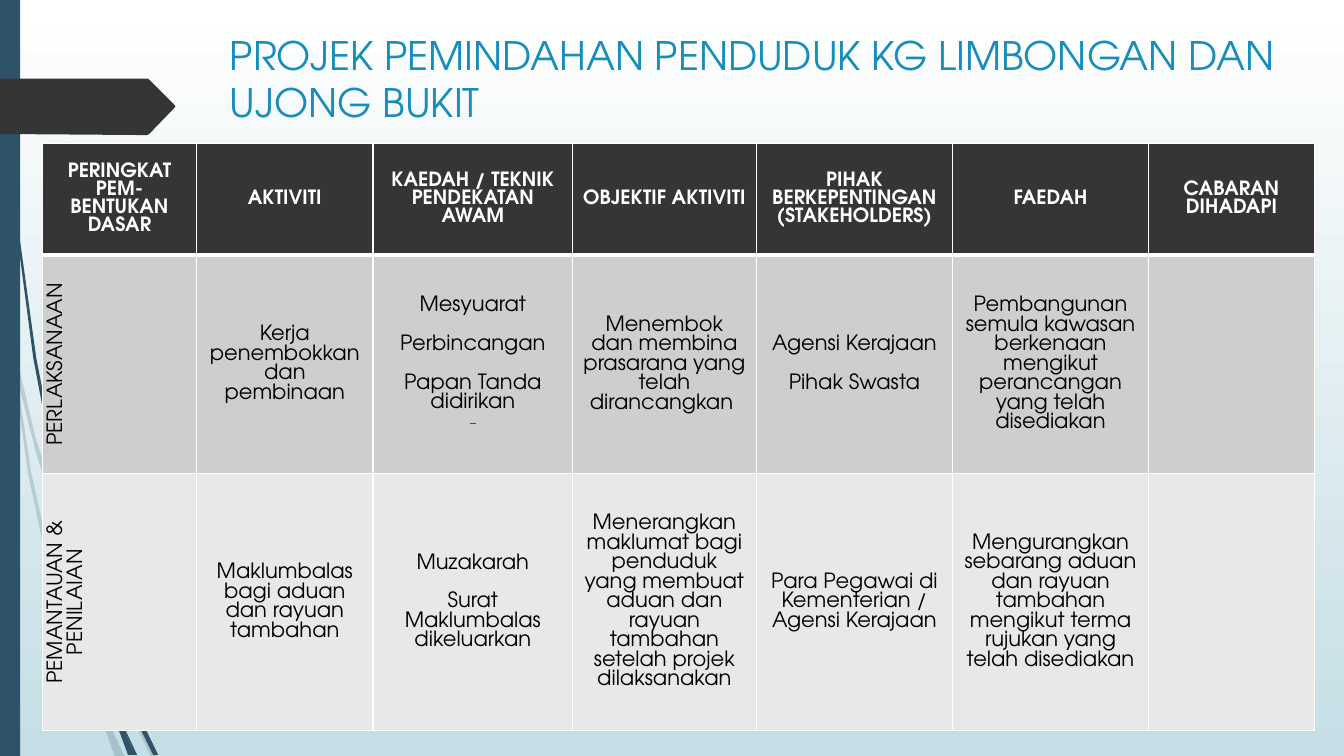
from copy import deepcopy
from dataclasses import dataclass
from typing import Any

from lxml.etree import SubElement
from pptx import Presentation
from pptx.dml.color import RGBColor
from pptx.enum.text import MSO_ANCHOR, PP_ALIGN
from pptx.enum.shapes import MSO_SHAPE
from pptx.oxml.ns import qn
from pptx.util import Inches, Pt

FONT = "TeX Gyre Adventor"
COLOURS = {
    "sky_top": "FFFFFF", "sky_bottom": "C5DEE5", "navy": "2E5369",
    "charcoal": "353535", "title": "178DBB", "white": "FFFFFF",
    "black": "000000", "red": "FF0000", "band_dark": "CECECE", "band_light": "E8E8E8",
}
Points = list[tuple[float, float]]


@dataclass
class Outline:
    points: Points
    colour: str = "navy"
    opacity: int = 100


@dataclass
class Entry:
    paras: tuple[str, ...] = ()
    gap: float = 13.9
    vertical: bool = False
    struck_end: bool = False


@dataclass
class Row:
    height: float
    fill: str
    text: str
    size: float
    bold: bool
    top: int
    bottom: int
    entries: list[Entry]


PALE_WISPS: list[Points] = [
    [(0.11, 3.5), (0.09, 3.22), (0, 2.82), (0, 2.99), (0.1, 3.44)],
    [(0.58, 5.22), (0.84, 5.99), (0.85, 5.86), (0.62, 5.2), (0.35, 4.33), (0.14, 3.45),
     (0.17, 3.76), (0.36, 4.5)],
    [(0.92, 6.07), (0.88, 5.96), (0.88, 6.1), (1.23, 6.94), (1.5, 7.51), (1.55, 7.51), (1.27, 6.92)],
    [(1.19, 7.51), (1.24, 7.51), (1.05, 7.11)],
    [(0.93, 6.83), (0.7, 6.19), (0.48, 5.45), (0.31, 4.69), (0.17, 3.76), (0.11, 3.5),
     (0.28, 4.7), (0.44, 5.46), (0.65, 6.21), (0.92, 6.93), (1.01, 7.14), (0.99, 7.07)],
    [(0.84, 5.99), (0.87, 6.46), (0.93, 6.83), (0.96, 6.92), (1.05, 7.11), (1.03, 7.06),
     (0.91, 6.46), (0.88, 6.1), (0.88, 6.08)],
    [(0.88, 5.84), (0.95, 5.22), (1.1, 4.62), (1.6, 3.49), (2.29, 2.45), (2.68, 1.98), (3.12, 1.54),
     (3.12, 1.53), (2.68, 1.97), (2.28, 2.44), (1.58, 3.48), (1.07, 4.61), (0.91, 5.22),
     (0.85, 5.84), (0.85, 5.86), (0.88, 5.96)],
    [(1.01, 7.14), (1.14, 7.51), (1.19, 7.51)],
    [(0.88, 6.08), (0.88, 5.96), (0.85, 5.86), (0.84, 5.99)],
    [(0.96, 6.92), (0.93, 6.83), (0.99, 7.07), (1.01, 7.14), (1.19, 7.51), (1.05, 7.11)],
]
NAVY_WISPS: list[Points] = [
    [(0.07, 1.1), (0.17, 2.33), (0.33, 3.55), (0.56, 4.77), (0.57, 4.81), (0.55, 4.53),
     (0.36, 3.55), (0.19, 2.32), (0.08, 1.09), (0.05, 0.48), (0.04, 0), (0.03, 0), (0.04, 0.48)],
    [(0.88, 5.92), (1.06, 6.45), (1.06, 6.31), (0.93, 5.9), (0.6, 4.72), (0.64, 5.05)],
    [(1.13, 6.49), (1.1, 6.41), (1.11, 6.56), (1.32, 7.08), (1.52, 7.49), (1.57, 7.49), (1.36, 7.06)],
    [(1.1, 6.91), (0.98, 6.57), (0.72, 5.56), (0.64, 5.05), (0.57, 4.77), (0.68, 5.57),
     (0.93, 6.59), (1.11, 7.08), (1.17, 7.22), (1.16, 7.17)],
    [(0.6, 4.72), (0.58, 4.53), (0.54, 3.49), (0.58, 2.45), (0.63, 1.93), (0.7, 1.41),
     (0.62, 1.93), (0.56, 2.45), (0.52, 3.49), (0.55, 4.49)],
    [(1.33, 7.49), (1.36, 7.49), (1.22, 7.19)],
    [(0.57, 4.77), (0.64, 5.05), (0.6, 4.72), (0.55, 4.49), (0.55, 4.53)],
    [(1.11, 6.33), (1.25, 5.52), (1.58, 4.76), (2.05, 4.06), (2.31, 3.74), (2.61, 3.44), (2.6, 3.44),
     (2.31, 3.73), (2.04, 4.05), (1.56, 4.74), (1.22, 5.51), (1.06, 6.31), (1.1, 6.41)],
    [(1.17, 7.22), (1.27, 7.49), (1.31, 7.49)],
    [(1.06, 6.45), (1.1, 6.91), (1.16, 7.06), (1.22, 7.19), (1.21, 7.16), (1.11, 6.56), (1.09, 6.51)],
    [(1.06, 6.45), (1.09, 6.51), (1.11, 6.56), (1.1, 6.41), (1.06, 6.31)],
    [(1.16, 7.06), (1.1, 6.91), (1.16, 7.17), (1.17, 7.22), (1.3, 7.49), (1.33, 7.49), (1.22, 7.19)],
]
TITLE_ARROW = Outline([(1.74, 1.06), (1.48, 1.33), (1.46, 1.34), (1.36, 1.34), (0, 1.33), (0, 0.78),
                       (1.46, 0.78), (1.48, 0.79), (1.73, 1.04)], "charcoal")
OUTLINES = [Outline(points, opacity=20) for points in PALE_WISPS] + [Outline(points) for points in NAVY_WISPS]

COLUMN_WIDTHS = [1.53, 1.75, 1.98, 1.82, 1.95, 1.94, 1.65]
HEADINGS = [
    "PERINGKAT PEM-BENTUKAN DASAR", "AKTIVITI", "KAEDAH / TEKNIK PENDEKATAN AWAM",
    "OBJEKTIF AKTIVITI", "PIHAK BERKEPENTINGAN (STAKEHOLDERS)", "FAEDAH", "CABARAN DIHADAPI",
]
ROWS = [
    Row(1.11, "charcoal", "white", 14, True, 1, 3, [Entry((heading,)) for heading in HEADINGS]),
    Row(2.17, "band_dark", "black", 15, False, 3, 1, [
        Entry(("PERLAKSANAAN",), vertical=True),
        Entry(("Kerja penembokkan dan pembinaan",)),
        Entry(("Mesyuarat", "Perbincangan", "Papan Tanda didirikan"), struck_end=True),
        Entry(("Menembok dan membina prasarana yang telah dirancangkan ",)),
        Entry(("Agensi Kerajaan", "Pihak Swasta")),
        Entry(("Pembangunan semula kawasan berkenaan mengikut perancangan yang telah disediakan",)),
        Entry(),
    ]),
    Row(2.55, "band_light", "black", 15, False, 1, 1, [
        Entry(("PEMANTAUAN &", "PENILAIAN"), gap=0, vertical=True),
        Entry(("Maklumbalas bagi aduan dan rayuan tambahan",)),
        Entry(("Muzakarah", "Surat Maklumbalas dikeluarkan")),
        Entry(("Menerangkan maklumat bagi penduduk yang membuat aduan dan rayuan tambahan "
               "setelah projek dilaksanakan",)),
        Entry(("Para Pegawai di Kementerian / Agensi Kerajaan",)),
        Entry(("Mengurangkan sebarang aduan dan rayuan tambahan mengikut terma rujukan "
               "yang telah disediakan",)),
        Entry(),
    ]),
]


def colour_of(name: str) -> RGBColor:
    return RGBColor.from_string(COLOURS[name])


def apply_format(target: Any, values: dict[str, Any]) -> None:
    for name, value in values.items():
        setattr(target, name, value)


def style_text(span: Any, size: float, colour: str, bold: bool = False) -> None:
    apply_format(span.font, {"name": FONT, "size": Pt(size), "bold": bold})
    span.font.color.rgb = colour_of(colour)


def paint_shape(shape: Any, colour: str) -> None:
    shape.shadow.inherit = False
    shape.fill.solid()
    shape.fill.fore_color.rgb = colour_of(colour)
    shape.line.fill.background()


def draw_outline(page: Any, outline: Outline) -> None:
    start, *others = [(Inches(x), Inches(y)) for x, y in outline.points]
    builder = page.shapes.build_freeform(*start)
    builder.add_line_segments(others, close=True)
    shape = builder.convert_to_shape()
    paint_shape(shape, outline.colour)
    if outline.opacity < 100:
        tint = shape.fill._xPr.find(qn("a:solidFill"))[0]
        SubElement(tint, qn("a:alpha"), val=str(outline.opacity * 1000))


def draw_borders(cell: Any, top: int, bottom: int) -> None:
    properties = cell._tc.get_or_add_tcPr()
    for side, points in {"lnL": 1, "lnR": 1, "lnT": top, "lnB": bottom}.items():
        line = SubElement(properties, qn(f"a:{side}"), w=str(Pt(points)))
        SubElement(SubElement(line, qn("a:solidFill")), qn("a:srgbClr"), val=COLOURS["white"])


def add_para(frame: Any, index: int, text: str, gap: float) -> Any:
    para = frame.add_paragraph() if index else frame.paragraphs[0]
    apply_format(para, {"alignment": PP_ALIGN.CENTER, "line_spacing": 1.0,
                        "space_before": Pt(gap if index else 0)})
    span = para.add_run()
    span.text = text
    return span


def add_struck_para(frame: Any, index: int, size: float) -> None:
    span = add_para(frame, index, " ", 0)
    style_text(span, size, "red")
    run_format = span.font._element
    run_format.set("strike", "sngStrike")
    end_format = SubElement(span._r.getparent(), qn("a:endParaRPr"), dict(run_format.attrib))
    end_format.extend(deepcopy(list(run_format)))


def fill_cell(cell: Any, row: Row, entry: Entry) -> None:
    apply_format(cell, {"vertical_anchor": MSO_ANCHOR.MIDDLE,
                        "margin_left": Inches(0.1), "margin_right": Inches(0.1)})
    draw_borders(cell, row.top, row.bottom)
    cell.fill.solid()
    cell.fill.fore_color.rgb = colour_of(row.fill)
    if entry.vertical:
        cell._tc.get_or_add_tcPr().set("vert", "vert270")
    for index, text in enumerate(entry.paras):
        style_text(add_para(cell.text_frame, index, text, entry.gap), row.size, row.text, row.bold)
    if entry.struck_end:
        add_struck_para(cell.text_frame, len(entry.paras), row.size)


def draw_table(page: Any) -> None:
    frame = page.shapes.add_table(len(ROWS), len(COLUMN_WIDTHS), Inches(0.42), Inches(1.42),
                                  Inches(sum(COLUMN_WIDTHS)), Inches(sum(row.height for row in ROWS)))
    for column, width in zip(frame.table.columns, COLUMN_WIDTHS):
        column.width = Inches(width)
    for line, row in zip(frame.table.rows, ROWS):
        line.height = Inches(row.height)
        for cell, entry in zip(line.cells, row.entries):
            fill_cell(cell, row, entry)


def draw_title(page: Any) -> None:
    title = page.shapes.title
    apply_format(title, {"left": Inches(2.18), "top": Inches(0.26),
                         "width": Inches(10.56), "height": Inches(1.04)})
    apply_format(title.text_frame, {"word_wrap": True, "vertical_anchor": MSO_ANCHOR.MIDDLE})
    para = title.text_frame.paragraphs[0]
    para.alignment = PP_ALIGN.LEFT
    span = para.add_run()
    span.text = "PROJEK PEMINDAHAN PENDUDUK KG LIMBONGAN DAN UJONG BUKIT"
    style_text(span, 28, "title")


def main() -> None:
    deck = Presentation()
    apply_format(deck, {"slide_width": Inches(13.33), "slide_height": Inches(7.5)})
    page = deck.slides.add_slide(deck.slide_layouts[5])
    sky = page.background.fill
    sky.gradient()
    sky.gradient_angle = 270
    for stop, name in zip(sky.gradient_stops, ("sky_top", "sky_bottom")):
        stop.color.rgb = colour_of(name)
    for outline in OUTLINES:
        draw_outline(page, outline)
    paint_shape(page.shapes.add_shape(MSO_SHAPE.RECTANGLE, 0, 0, Inches(0.2), Inches(7.5)), "navy")
    draw_outline(page, TITLE_ARROW)
    draw_title(page)
    draw_table(page)
    deck.save("out.pptx")


if __name__ == "__main__":
    main()
